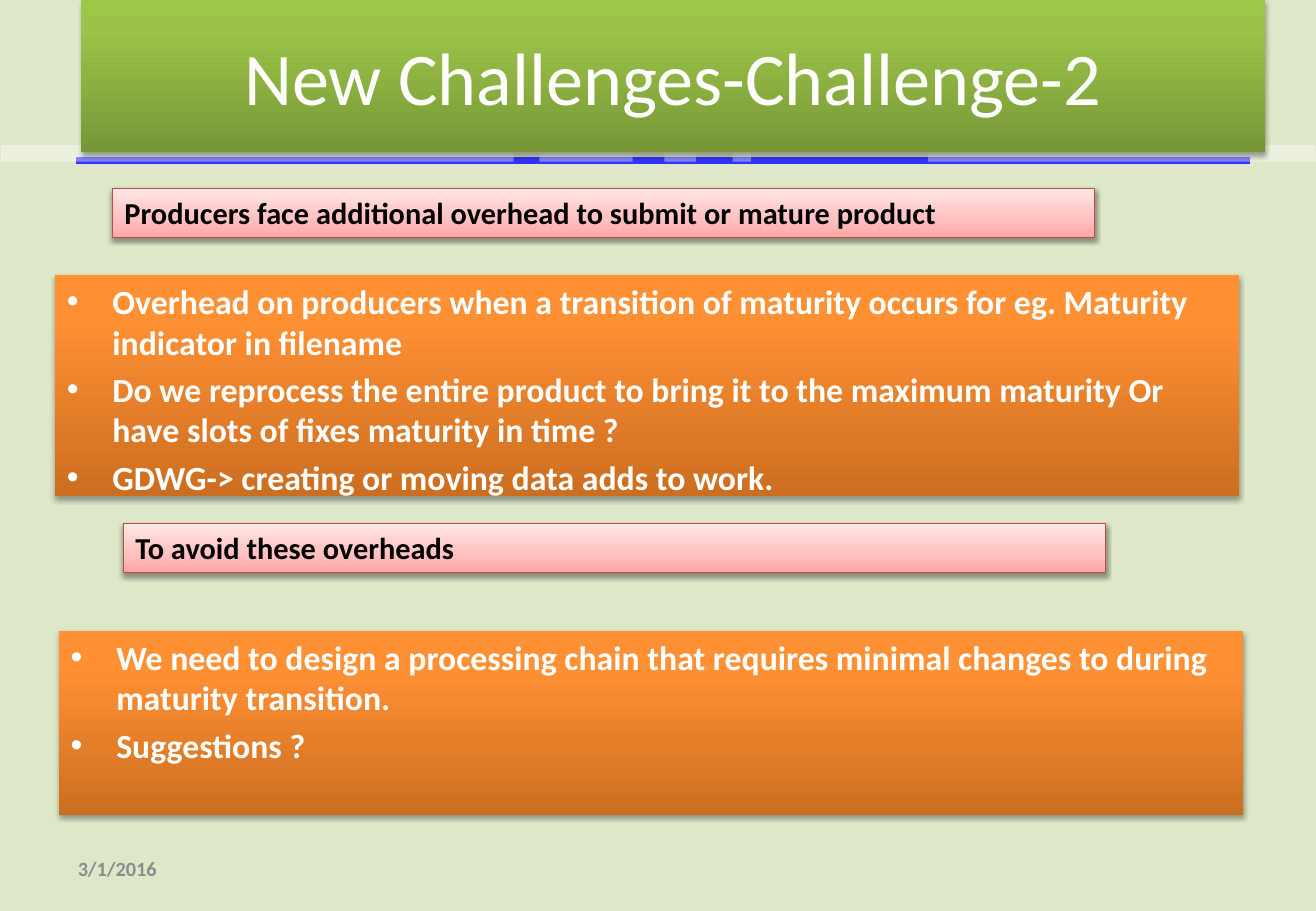
from lxml.etree import SubElement
from pptx import Presentation
from pptx.dml.color import RGBColor
from pptx.enum.shapes import MSO_CONNECTOR, MSO_SHAPE
from pptx.enum.text import MSO_ANCHOR, PP_ALIGN
from pptx.oxml.ns import qn
from pptx.util import Pt

ORANGE = [(0, "CC6E20"), (80, "FF9034"), (100, "FF9136")]
GREEN = [(0, "779737"), (80, "9BC348"), (100, "9DC746")]
PINK = [(0, "FFA6A5"), (35, "FFC0BF"), (100, "FFE7E7")]
BANDS = [(0.7, 303.8), (319.7, 55.4), (393.8, 18.7), (434.2, 10.8), (550, 229.8)]


def color(code):
    return RGBColor.from_string(code)


def node(base, tag, **attrs):
    return SubElement(base, qn(tag), {k: str(v) for k, v in attrs.items()})


def apply(item, style):
    for key, value in style.items():
        setattr(item, key, value)


def panel(slide, box, stops, alpha, edge=None):
    shape = slide.shapes.add_shape(MSO_SHAPE.RECTANGLE, *map(Pt, box))
    shape.fill.gradient()
    shape.fill.gradient_angle = 90
    grad = shape._element.spPr.find(".//" + qn("a:gsLst"))
    for old in list(grad):
        grad.remove(old)
    for pos, code in stops:
        stop = node(grad, "a:gs", pos=pos * 1000)
        node(stop, "a:srgbClr", val=code)
    if edge:
        shape.line.color.rgb = color(edge)
        shape.line.width = Pt(0.75)
    else:
        shape.line.fill.background()
    shape.shadow.inherit = False
    effect = shape._element.spPr.find(qn("a:effectLst"))
    shade = node(effect, "a:outerShdw", blurRad=Pt(3.1), dist=Pt(1.8),
                 dir=5400000, rotWithShape=0)
    black = node(shade, "a:srgbClr", val="000000")
    node(black, "a:alpha", val=alpha * 1000)
    return shape


def write(shape, lines, size, code, bold=False, align=PP_ALIGN.LEFT,
          anchor=MSO_ANCHOR.TOP, bullet=False):
    frame = shape.text_frame
    apply(frame, {"word_wrap": True, "vertical_anchor": anchor})
    for i, text in enumerate(lines):
        para = frame.add_paragraph() if i else frame.paragraphs[0]
        if bullet:
            props = para._p.get_or_add_pPr()
            props.set("marL", str(Pt(27)))
            props.set("indent", str(Pt(-27)))
            node(props, "a:buFont", typeface="Arial")
            node(props, "a:buChar", char="•")
        para.alignment = align
        if i:
            para.space_before = Pt(4)
        run = para.add_run()
        run.text = text
        apply(run.font, {"name": "Calibri", "size": Pt(size), "bold": bold})
        run.font.color.rgb = color(code)


def stripe(slide, top):
    rule = slide.shapes.add_connector(
        MSO_CONNECTOR.STRAIGHT, Pt(45), Pt(top + 9.4), Pt(741), Pt(top + 9.4))
    rule.line.color.rgb = color("3333FF")
    rule.line.width = Pt(4.5)
    node(rule._element.spPr, "a:effectLst")
    for left, width in BANDS:
        band = slide.shapes.add_shape(
            MSO_SHAPE.RECTANGLE, Pt(left), Pt(top), Pt(width), Pt(10))
        band.shadow.inherit = False
        band.line.fill.background()
        band.fill.solid()
        band.fill.fore_color.rgb = color("FFFFFF")
        tint = band._element.spPr.find(".//" + qn("a:srgbClr"))
        node(tint, "a:alpha", val=40000)


def title(slide, box, text):
    shape = panel(slide, box, GREEN, 35)
    write(shape, [text], 44, "FFFFFF", align=PP_ALIGN.CENTER,
          anchor=MSO_ANCHOR.MIDDLE)


def label(slide, box, text):
    write(panel(slide, box, PINK, 38, "BF4C48"), [text], 18, "000000", True)


def points(slide, box, lines):
    write(panel(slide, box, ORANGE, 35), lines, 20, "FFFFFF", True, bullet=True)


def date(slide, box, text):
    shape = slide.shapes.add_textbox(*map(Pt, box))
    write(shape, [text], 12, "8C8C8C", True, anchor=MSO_ANCHOR.MIDDLE)


def main():
    deck = Presentation()
    apply(deck, {"slide_width": Pt(780), "slide_height": Pt(540)})
    slide = deck.slides.add_slide(deck.slide_layouts[6])
    slide.background.fill.solid()
    slide.background.fill.fore_color.rgb = color("DEE8C8")
    stripe(slide, 85.8)
    points(slide, (32.5, 163, 702, 131), [
        "Overhead on producers when a transition of maturity occurs for eg. Maturity indicator in filename",
        "Do we reprocess the entire product to bring it to the maximum maturity Or have slots of fixes maturity in time ?",
        "GDWG-> creating or moving data adds to work.",
    ])
    date(slide, (39, 500.6, 182, 28.8), "3/1/2016")
    title(slide, (48, 0, 702, 90), "New Challenges-Challenge-2")
    label(slide, (66.7, 111.6, 582, 29),
          "Producers face additional overhead to submit or mature product")
    label(slide, (73.2, 310.2, 582, 29), "To avoid these overheads")
    points(slide, (34.8, 373.8, 702, 109.2), [
        "We need to design a processing chain that requires minimal changes to during maturity transition.",
        "Suggestions ?",
    ])
    deck.save("out.pptx")


if __name__ == "__main__":
    main()
